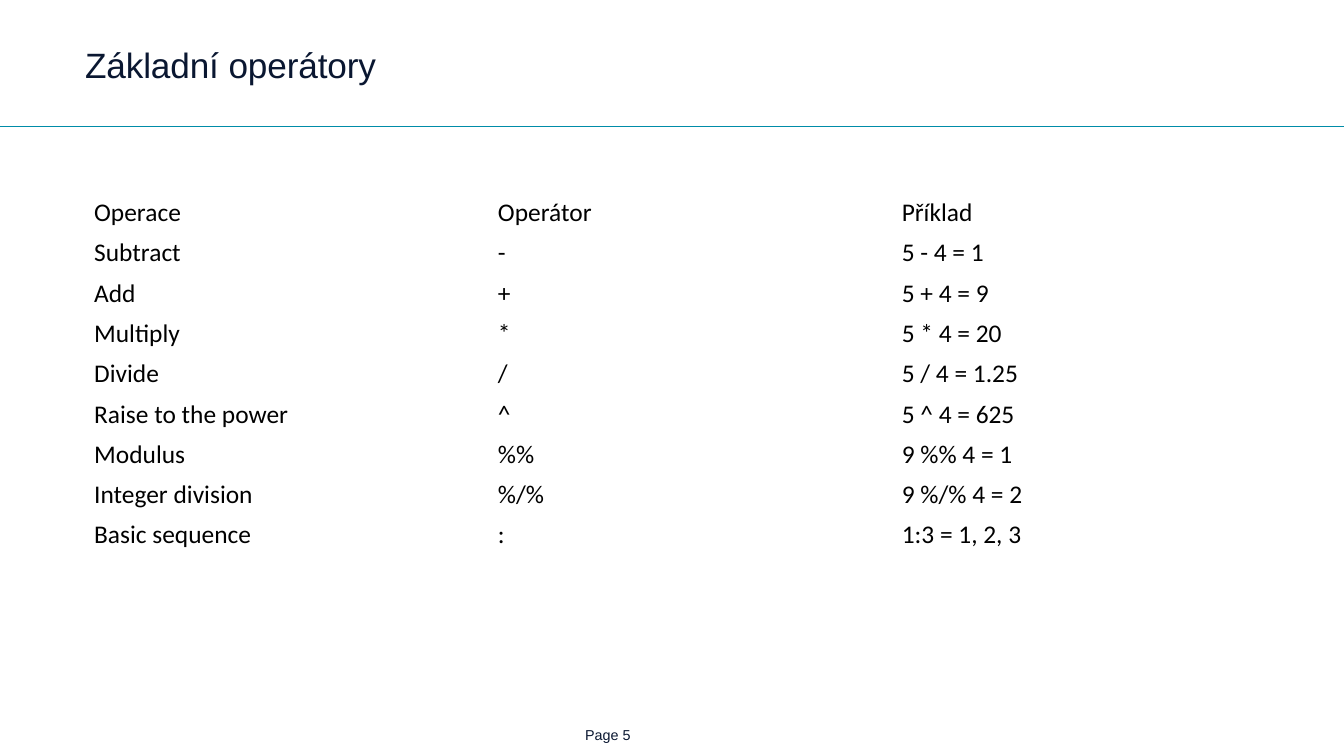
from dataclasses import dataclass

from lxml.etree import SubElement
from pptx import Presentation
from pptx.dml.color import RGBColor
from pptx.enum.shapes import MSO_CONNECTOR
from pptx.enum.text import MSO_ANCHOR, PP_ALIGN
from pptx.oxml.ns import qn
from pptx.util import Pt

PX = 9144  # 100 px to the inch
WIDE, HIGH = 1470, 827


@dataclass(frozen=True)
class Theme:
    ink: str = "0A1731"
    body: str = "000000"
    rule: str = "008CA8"
    head: str = "Arial"
    text: str = "Calibri"
    title: float = 27.7
    cell: float = 20
    foot: float = 11.3


THEME = Theme()

ROWS = [
    ("Operace", "Operátor", "Příklad"),
    ("Subtract", "-", "5 - 4 = 1"),
    ("Add", "+", "5 + 4 = 9"),
    ("Multiply", "*", "5 * 4 = 20"),
    ("Divide", "/", "5 / 4 = 1.25"),
    ("Raise to the power", "^", "5 ^ 4 = 625"),
    ("Modulus", "%%", "9 %% 4 = 1"),
    ("Integer division", "%/%", "9 %/% 4 = 2"),
    ("Basic sequence", ":", "1:3 = 1, 2, 3"),
]


def scale(box):
    return [n * PX for n in box]


def add_run(para, text, font, size, color):
    para.alignment = PP_ALIGN.LEFT
    run = para.add_run()
    run.text = text
    run.font.name = font
    run.font.size = Pt(size)
    run.font.color.rgb = RGBColor.from_string(color)
    return run


def set_frame(frame, anchor, right=0):
    frame.word_wrap = True
    frame.vertical_anchor = anchor
    frame.margin_left = frame.margin_top = frame.margin_bottom = 0
    frame.margin_right = right * PX


def add_title(slide, box, text):
    title = slide.shapes.title
    title.left, title.top, title.width, title.height = scale(box)
    set_frame(title.text_frame, MSO_ANCHOR.TOP, right=9)
    para = title.text_frame.paragraphs[0]
    para.line_spacing = 0.85
    para.space_before = Pt(0)
    para.space_after = Pt(7.5)
    run = add_run(para, text, THEME.head, THEME.title, THEME.ink)
    run.font._element.set("spc", "-10")


def add_rule(slide, top):
    line = slide.shapes.add_connector(
        MSO_CONNECTOR.STRAIGHT, *scale((0, top, WIDE, top)))
    line.line.color.rgb = RGBColor.from_string(THEME.rule)
    line.line.width = Pt(0.75)
    SubElement(line._element.spPr, qn("a:effectLst"))


def add_grid(slide, box, rows):
    table = slide.shapes.add_table(len(rows), len(rows[0]), *scale(box)).table
    table.first_row = table.horz_banding = False
    for r, row in enumerate(rows):
        for c, text in enumerate(row):
            cell = table.cell(r, c)
            cell.fill.background()
            cell.vertical_anchor = MSO_ANCHOR.MIDDLE
            add_run(cell.text_frame.paragraphs[0], text,
                    THEME.text, THEME.cell, THEME.body)


def add_foot(slide, box, text):
    frame = slide.shapes.add_textbox(*scale(box)).text_frame
    set_frame(frame, MSO_ANCHOR.BOTTOM)
    add_run(frame.paragraphs[0], text, THEME.head, THEME.foot, THEME.ink)


def main():
    deck = Presentation()
    deck.slide_width, deck.slide_height = scale((WIDE, HIGH))
    slide = deck.slides.add_slide(deck.slide_layouts[5])

    # Heading and rule
    add_rule(slide, 138)
    add_title(slide, (93, 55, 1325, 70), "Základní operátory")

    # Table of operators
    add_grid(slide, (93, 211, 1325, 44 * len(ROWS)), ROWS)

    # Page number
    add_foot(slide, (640, 797, 92, 16), "Page 5")

    deck.save("out.pptx")


if __name__ == "__main__":
    main()
